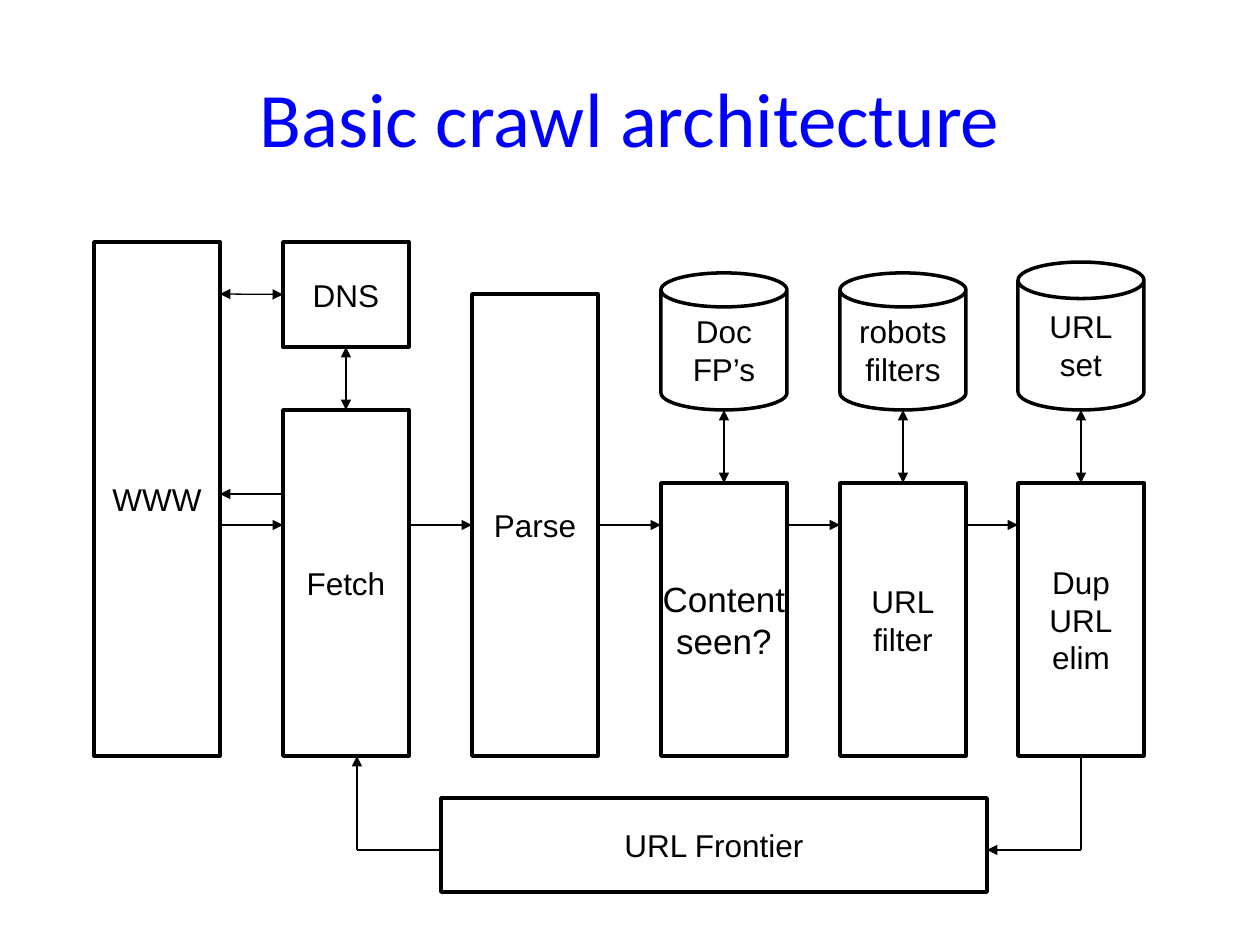
"""Builds the slide on the basic architecture of a web crawler."""
from lxml import etree
from pptx import Presentation, util as u
from pptx.dml.color import RGBColor
from pptx.enum import shapes, text
from pptx.oxml import ns


def px(length):
    return u.Emu(round(length * 914400 / 126))


def rgb(color):
    return RGBColor.from_string(color)


deck = Presentation()
deck.slide_width, deck.slide_height = px(1260), px(945)
slide = deck.slides.add_slide(deck.slide_layouts[5])

title = slide.shapes.title
title.left, title.top, title.width, title.height = px(63), px(38), px(1134), px(157)
title.text_frame.text = "Basic crawl architecture"
title.text_frame.vertical_anchor = text.MSO_ANCHOR.MIDDLE
heading = title.text_frame.paragraphs[0]
heading.alignment = text.PP_ALIGN.CENTER
heading.font.name, heading.font.size = "Calibri", u.Pt(44)
heading.font.color.rgb = rgb("0000FF")

RECT, CAN = shapes.MSO_SHAPE.RECTANGLE, shapes.MSO_SHAPE.CAN
parts = [
    ("WWW", RECT, 94, 242, 126, 514),
    ("DNS", RECT, 283, 242, 126, 105),
    ("Fetch", RECT, 283, 410, 126, 346),
    ("Parse", RECT, 472, 294, 126, 462),
    ("Content\nseen?", RECT, 661, 483, 126, 273),
    ("URL\nfilter", RECT, 840, 483, 126, 273),
    ("Dup\nURL\nelim", RECT, 1018, 483, 126, 273),
    ("Doc\nFP’s", CAN, 661, 273, 126, 137),
    ("robots\nfilters", CAN, 840, 273, 126, 137),
    ("URL\nset", CAN, 1018, 262, 126, 148),
    ("URL Frontier", RECT, 441, 798, 546, 94),
]
stages = {}
for label, outline, left, top, width, height in parts:
    stage = slide.shapes.add_shape(outline, px(left), px(top), px(width), px(height))
    stage.shadow.inherit = False
    stage.fill.background()
    stage.line.color.rgb = rgb("000000")
    stage.line.width = u.Pt(2)
    if outline == CAN:
        stage.adjustments[0] = 0.29 if label == "URL\nset" else 0.27
    frame = stage.text_frame
    frame.text = label
    frame.word_wrap = False
    frame.vertical_anchor = text.MSO_ANCHOR.MIDDLE
    for line in frame.paragraphs:
        line.alignment = text.PP_ALIGN.CENTER
        line.font.name = "Arial"
        line.font.size = u.Pt(20 if label == "Content\nseen?" else 18)
        line.font.color.rgb = rgb("000000")
    stages[label] = stage

TOP, LEFT, BOTTOM, RIGHT = range(4)
END, BOTH = ["tailEnd"], ["headEnd", "tailEnd"]
flows = [
    (283, 294, 220, 294, BOTH, ("DNS", LEFT), None),
    (346, 347, 346, 410, BOTH, ("DNS", BOTTOM), ("Fetch", TOP)),
    (220, 525, 283, 525, END, None, None),
    (283, 494, 220, 494, END, None, None),
    (409, 525, 472, 525, END, None, ("Parse", LEFT)),
    (598, 525, 661, 525, END, ("Parse", RIGHT), None),
    (787, 525, 840, 525, END, None, None),
    (966, 525, 1018, 525, END, None, None),
    (724, 410, 724, 483, BOTH, None, ("Content\nseen?", TOP)),
    (903, 410, 903, 483, BOTH, None, ("URL\nfilter", TOP)),
    (1081, 410, 1081, 483, BOTH, None, ("Dup\nURL\nelim", TOP)),
    (1081, 850, 1081, 756, [], None, ("Dup\nURL\nelim", BOTTOM)),
    (1081, 850, 987, 850, END, None, None),
    (441, 850, 357, 850, [], None, None),
    (357, 850, 357, 756, END, None, None),
]
for x1, y1, x2, y2, heads, source, target in flows:
    flow = slide.shapes.add_connector(
        shapes.MSO_CONNECTOR.STRAIGHT, px(x1), px(y1), px(x2), px(y2))
    flow.line.color.rgb = rgb("000000")
    flow.line.width = u.Pt(0.75)
    for head in heads:
        etree.SubElement(flow.line._get_or_add_ln(), ns.qn("a:" + head), type="triangle")
    etree.SubElement(flow._element.spPr, ns.qn("a:effectLst"))
    if source:
        flow.begin_connect(stages[source[0]], source[1])
    if target:
        flow.end_connect(stages[target[0]], target[1])

deck.save("out.pptx")
